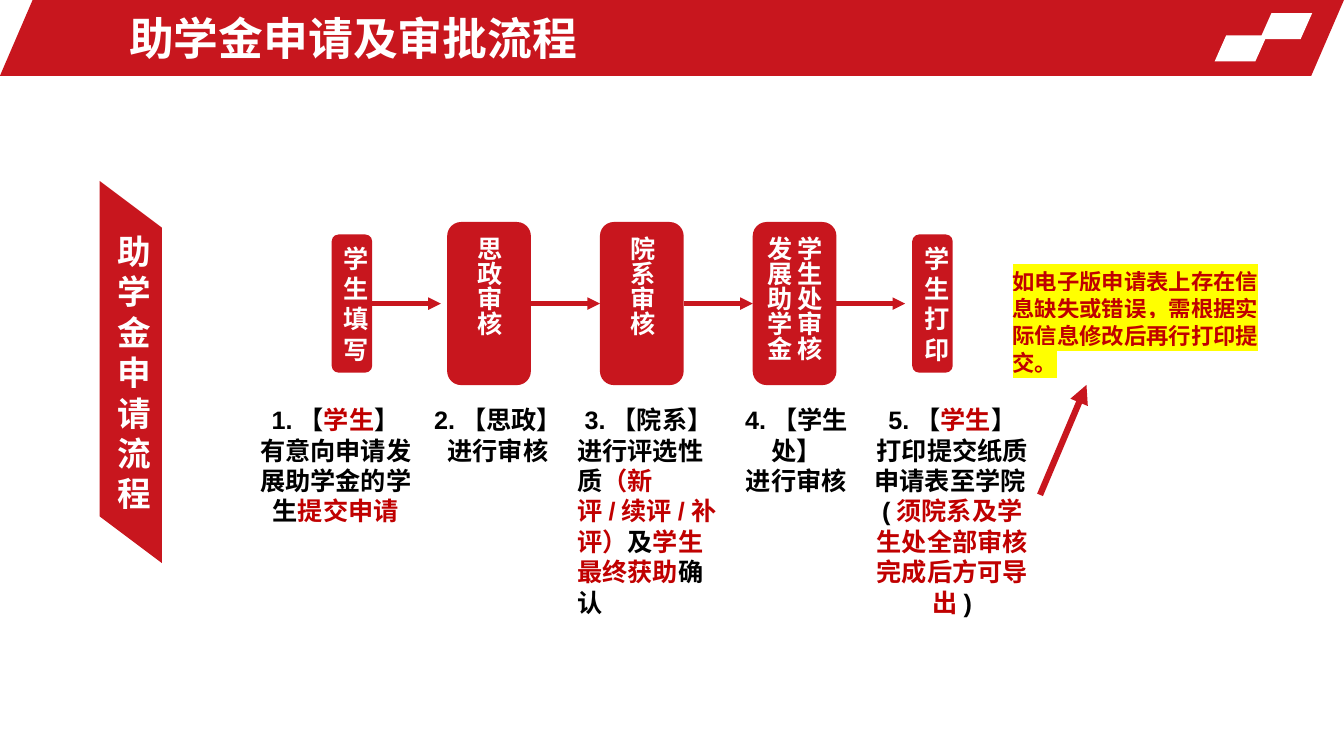
from pptx import Presentation, util as u
from pptx.dml.color import RGBColor
from pptx.enum import dml, shapes, text
from pptx.oxml.ns import qn
from lxml import etree

Cm, Pt = u.Cm, u.Pt
RED = RGBColor(0xC8, 0x16, 0x1E)
DARK_RED = RGBColor(0xC0, 0x00, 0x00)
BLACK = RGBColor(0, 0, 0)
WHITE = RGBColor(0xFF, 0xFF, 0xFF)
LATIN, CJK = "Arial", "Noto Sans CJK SC"
LEFT, CENTER = text.PP_ALIGN.LEFT, text.PP_ALIGN.CENTER
MID_Y = 7.65  # shared centre line of the flow, in cm
NOTES_TOP = 10.07

# label lines, is wide, box left, note left, note width, note height, note paragraphs
STEPS = [
    (["学生填写"], False, 8.36, 6.15, 4.62, 3.23,
     [[("1.【", BLACK), ("学生", DARK_RED), ("】", BLACK)],
      [("有意向申请发展助学金的学生", BLACK), ("提交申请", DARK_RED)]]),
    (["思政审核"], True, 11.27, 10.67, 3.76, 1.8,
     [[("2.【思政】", BLACK)], [("进行审核", BLACK)]]),
    (["院系审核"], True, 15.12, 14.3, 4.09, 4.7,
     [[("3.【院系】", BLACK)],
      [("进行评选性质", BLACK), ("（新评/续评/补评）", DARK_RED), ("及", BLACK),
       ("学生最终获助", DARK_RED), ("确认", BLACK)]]),
    (["学生处审核", "发展助学金"], True, 18.97, 18.19, 3.76, 1.8,
     [[("4.【学生处】", BLACK)], [("进行审核", BLACK)]]),
    (["学生打印"], False, 22.99, 21.79, 4.42, 5.44,
     [[("5.【", BLACK), ("学生", DARK_RED), ("】", BLACK)],
      [("打印提交纸质申请表至学院(", BLACK),
       ("须院系及学生处全部审核完成后方可导出", DARK_RED), (")", BLACK)]]),
]


def set_all(obj, values):
    for name, value in values.items():
        setattr(obj, name, value)


def write(tf, paragraphs, size, aligns, latin=LATIN, spacing=True, highlight=None):
    """Fill a frame with paragraphs of (text, colour) runs."""
    for i, (runs, align) in enumerate(zip(paragraphs, aligns)):
        p = tf.paragraphs[0] if i == 0 else tf.add_paragraph()
        set_all(p, {"alignment": align, "space_before": Pt(0)})
        if spacing:
            p.line_spacing = Pt(size * 1.205)
        for words, color in runs:
            r = p.add_run()
            r.text = words
            set_all(r.font, {"size": Pt(size), "bold": True, "name": latin,
                             "language_id": None})
            r.font.color.rgb = color
            rPr = r._r.get_or_add_rPr()
            rPr.set("lang", "zh-CN")
            face = rPr.find(qn("a:latin"))
            ea = etree.Element(qn("a:ea"), typeface=CJK)
            face.addnext(ea)
            if highlight:
                mark = etree.Element(qn("a:highlight"))
                etree.SubElement(mark, qn("a:srgbClr"), val=highlight)
                face.addprevious(mark)


def add_block(slide, kind, left, top, width, height, fill=RED, adj=None):
    sp = slide.shapes.add_shape(kind, Cm(left), Cm(top), Cm(width), Cm(height))
    sp.shadow.inherit = False
    sp.fill.solid()
    sp.fill.fore_color.rgb = fill
    sp.line.fill.background()
    if adj is not None:
        sp.adjustments[0] = adj
    return sp


def add_label(sp, lines, size, vert=None, align=CENTER):
    tf = sp.text_frame
    set_all(tf, {"word_wrap": True, "vertical_anchor": text.MSO_ANCHOR.MIDDLE})
    if vert:
        tf._txBody.bodyPr.set("vert", vert)
    write(tf, [[(line, WHITE)] for line in lines], size, [align] * len(lines))


def add_note(slide, left, top, width, height, paragraphs, size, aligns, **style):
    sp = slide.shapes.add_textbox(Cm(left), Cm(top), Cm(width), Cm(height))
    sp.text_frame.word_wrap = True
    write(sp.text_frame, paragraphs, size, aligns, **style)


def add_arrow(slide, x1, y1, x2, y2, width):
    line = slide.shapes.add_connector(
        shapes.MSO_CONNECTOR.STRAIGHT, Cm(x1), Cm(y1), Cm(x2), Cm(y2))
    line.line.color.rgb = RED
    line.line.width = Pt(width)
    line.line.dash_style = dml.MSO_LINE.SOLID
    etree.SubElement(line.line._get_or_add_ln(), qn("a:tailEnd"), type="triangle")
    etree.SubElement(line.element.spPr, qn("a:effectLst"))
    return line


def add_header(slide, title):
    slant = shapes.MSO_SHAPE.PARALLELOGRAM
    add_block(slide, slant, 0, 0, 33.87, 1.91, adj=0.431)
    for left, top in ((31.75, 0.33), (30.61, 0.89)):
        add_block(slide, slant, left, top, 1.32, 0.66, WHITE, 0.444)
    sp = slide.shapes.title
    set_all(sp, {"left": Cm(3), "top": Cm(0.13), "width": Cm(24.41), "height": Cm(1.65)})
    set_all(sp.text_frame, {"word_wrap": True, "auto_size": text.MSO_AUTO_SIZE.NONE,
                            "vertical_anchor": text.MSO_ANCHOR.MIDDLE})
    write(sp.text_frame, [[(title, WHITE)]], 32, [LEFT], spacing=False)
    slide.shapes.element.append(sp.element)  # bring the title above the band


def add_steps(slide):
    boxes = []
    for lines, wide, left, note_left, note_w, note_h, paragraphs in STEPS:
        width, height = (2.11, 4.11) if wide else (1.02, 3.48)
        box = add_block(slide, shapes.MSO_SHAPE.ROUNDED_RECTANGLE,
                        left, MID_Y - height / 2, width, height)
        add_label(box, lines, 18, "eaVert" if wide else None, LEFT if wide else CENTER)
        boxes.append(box)
        body_align = LEFT if len(paragraphs[1]) > 3 else CENTER
        add_note(slide, note_left, NOTES_TOP, note_w, note_h, paragraphs, 18,
                 [CENTER, body_align])
    # Arrows touching a narrow box at their head stop short of it
    for i, (start, end) in enumerate(zip(boxes, boxes[1:])):
        x1 = (start.left + start.width) / Cm(1)
        joined = i in (1, 2)
        line = add_arrow(slide, x1, MID_Y, x1 + 1.73, MID_Y, 3)
        line.begin_connect(start, 3)
        if joined:
            line.end_connect(end, 1)


def main():
    prs = Presentation()
    set_all(prs, {"slide_width": Cm(33.87), "slide_height": Cm(19.05)})
    slide = prs.slides.add_slide(prs.slide_layouts[5])

    # Header band and title
    add_header(slide, "助学金申请及审批流程")

    # Upright banner on the left
    banner = add_block(slide, shapes.MSO_SHAPE.PARALLELOGRAM, -1.52, 8.59, 9.63, 1.57, adj=0.75)
    banner.rotation = 90
    add_label(banner, ["助学金申请流程"], 24, "vert270")

    # Flow of steps
    add_steps(slide)

    # Highlighted reminder and its arrow
    reminder = "如电子版申请表上存在信息缺失或错误，需根据实际信息修改后再行打印提交。"
    add_note(slide, 25.27, 6.62, 6.99, 3, [[(reminder, DARK_RED)]], 16, [LEFT],
             latin=CJK, highlight="FFFF00")
    add_arrow(slide, 26.21, 12.47, 27.38, 9.7, 4.5)

    prs.save("out.pptx")


if __name__ == "__main__":
    main()
